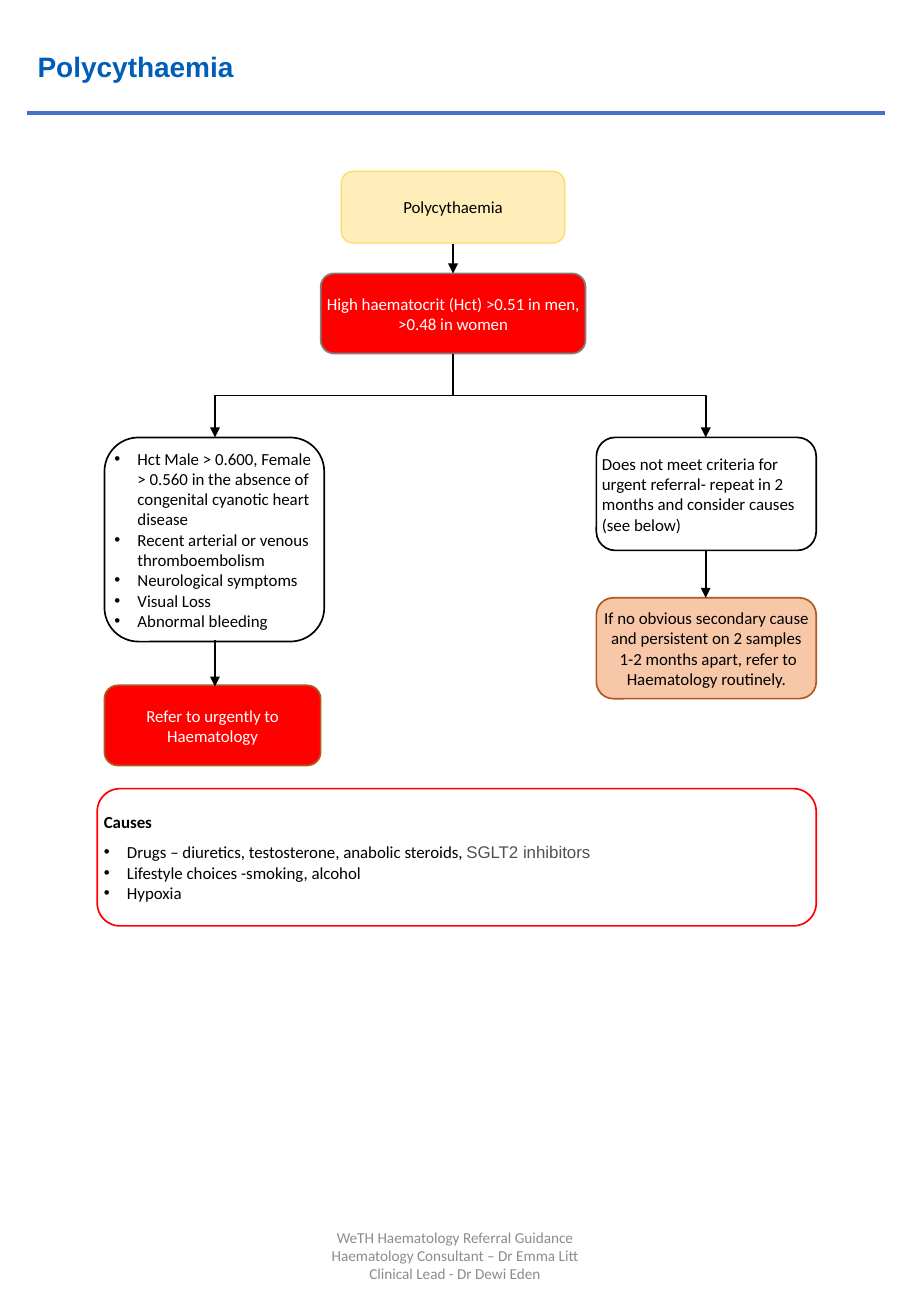
import pptx
import pptx.dml.color
import pptx.enum.shapes
import pptx.enum.text
import pptx.oxml.ns
import pptx.util
from lxml import etree

SCALE = 9144
LEFT = pptx.enum.text.PP_ALIGN.LEFT
MID = pptx.enum.text.PP_ALIGN.CENTER
LINKS = pptx.enum.shapes.MSO_CONNECTOR
BLACK, WHITE, RED, BROWN = "000000", "FFFFFF", "FF0000", "AE5A21"


def px(num):
    return pptx.util.Emu(round(num * SCALE))


def hue(code):
    return pptx.dml.color.RGBColor.from_string(code)


def add(node, tag, **attrs):
    return etree.SubElement(node, pptx.oxml.ns.qn(tag), **attrs)


class Chart:
    """Draws the parts of a referral flow chart on one slide."""

    face = "Calibri"
    size = 10
    indent = 19

    def __init__(self, deck):
        self.slide = deck.slides.add_slide(deck.slide_layouts[5])

    def font(self, font, color, size=None, face=None, bold=False):
        font.name = face or self.face
        font.size = pptx.util.Pt(size or self.size)
        font.bold = bold
        font.color.rgb = hue(color)

    def frame(self, shape, side, top):
        frame = shape.text_frame
        frame.word_wrap = True
        frame.auto_size = pptx.enum.text.MSO_AUTO_SIZE.NONE
        frame.vertical_anchor = pptx.enum.text.MSO_ANCHOR.MIDDLE
        frame.margin_left = frame.margin_right = px(side)
        frame.margin_top = frame.margin_bottom = px(top)
        return frame

    def fill(self, frame, lines, color, align, size=None):
        for num, line in enumerate(lines):
            para = frame.add_paragraph() if num else frame.paragraphs[0]
            para.text = line
            para.alignment = align
            self.font(para.font, color, size)

    def bullet(self, para):
        props = para._p.get_or_add_pPr()
        props.set("marL", str(px(self.indent)))
        props.set("indent", str(px(-self.indent)))
        add(props, "a:buFont", typeface="Arial")
        add(props, "a:buChar", char="•")
        props.append(props.find(pptx.oxml.ns.qn("a:defRPr")))

    def title(self, text, x, y, w, h):
        shape = self.slide.shapes.title
        shape.left, shape.top, shape.width, shape.height = map(px, (x, y, w, h))
        frame = self.frame(shape, 8, 4)
        self.fill(frame, [text], "005EB8", LEFT)
        self.font(frame.paragraphs[0].font, "005EB8", 16.6, "Arial", True)

    def box(self, x, y, w, h, lines, fill=WHITE, line=BLACK, color=BLACK, align=LEFT, weight=1):
        kind = pptx.enum.shapes.MSO_SHAPE.ROUNDED_RECTANGLE
        shape = self.slide.shapes.add_shape(kind, *map(px, (x, y, w, h)))
        shape.shadow.inherit = False
        shape.fill.solid()
        shape.fill.fore_color.rgb = hue(fill)
        shape.line.color.rgb = hue(line)
        shape.line.width = pptx.util.Pt(weight)
        frame = self.frame(shape, 0, 0)
        self.fill(frame, lines, color, align)
        return frame.paragraphs

    def note(self, x, y, w, h, lines):
        shape = self.slide.shapes.add_textbox(*map(px, (x, y, w, h)))
        self.fill(self.frame(shape, 10, 5), lines, "8C8C8C", MID, 9)

    def rule(self, x1, y1, x2, y2, color=BLACK, weight=1, kind=LINKS.STRAIGHT):
        link = self.slide.shapes.add_connector(kind, *map(px, (x1, y1, x2, y2)))
        link.line.color.rgb = hue(color)
        link.line.width = pptx.util.Pt(weight)
        add(link._element.spPr, "a:effectLst")
        return link

    def head(self, link):
        add(link.get_or_add_ln(), "a:tailEnd", type="triangle")

    def arrow(self, x, y1, y2):
        self.head(self.rule(x, y1, x, y2))

    def bend(self, x1, y1, x2, y2):
        midx, midy = (x1 + x2) / 2, (y1 + y2) / 2
        tall, wide = (y2 - y1) / 2, abs(x2 - x1) / 2
        side = tall if x2 > x1 else -tall
        link = self.rule(midx + side, midy - wide, midx - side, midy + wide, kind=LINKS.ELBOW)
        link._element.spPr.xfrm.set("rot", str((270 if x2 > x1 else 90) * 60000))
        self.head(link)


def main():
    deck = pptx.Presentation()
    deck.slide_width, deck.slide_height = px(750), px(1083)
    chart = Chart(deck)
    chart.title("Polycythaemia", 23, 21, 524, 67)
    chart.rule(22, 93, 729, 93, "4472C4", 2.75)

    chart.box(281, 141, 184, 59, ["Polycythaemia"], "FFEEB9", "FFD966", align=MID, weight=0.75)
    chart.box(264, 225, 218, 66, ["High haematocrit (Hct) >0.51 in men, >0.48 in women"],
              RED, "808080", WHITE, MID)
    chart.box(491, 360, 181, 93, [
        "Does not meet criteria for urgent referral- repeat in 2 months and consider causes (see below)"])
    chart.box(491, 492, 181, 83, [
        "If no obvious secondary cause and persistent on 2 samples",
        " 1-2 months apart, refer to Haematology routinely."], "F7C7A7", BROWN, align=MID)
    signs = chart.box(86, 360, 181, 168, [
        "Hct Male > 0.600, Female > 0.560 in the absence of congenital cyanotic heart disease",
        "Recent arterial or venous thromboembolism",
        "Neurological symptoms",
        "Visual Loss",
        "Abnormal bleeding"])
    chart.box(86, 564, 178, 66, ["Refer to urgently to Haematology"], RED, BROWN, WHITE, MID)
    causes = chart.box(80, 649, 592, 113, [
        "Causes",
        "Drugs – diuretics, testosterone, anabolic steroids, ",
        "Lifestyle choices -smoking, alcohol",
        "Hypoxia"], line=RED)
    causes[0].font.bold = True
    causes[0].space_after = pptx.util.Pt(6)
    drug = causes[1].add_run()
    drug.text = "SGLT2 inhibitors"
    chart.font(drug.font, "4D5156", face="Arial")
    for para in (*signs, *causes[1:]):
        chart.bullet(para)

    for x, top, end in ((373, 201, 225), (581, 453, 492), (177, 527, 565)):
        chart.arrow(x, top, end)
    for x in (177, 581):
        chart.bend(373, 291, x, 360)

    chart.note(248, 1004, 253, 58, [
        "WeTH Haematology Referral Guidance",
        "Haematology Consultant – Dr Emma Litt Clinical Lead - Dr Dewi Eden"])
    deck.save("out.pptx")


if __name__ == "__main__":
    main()
